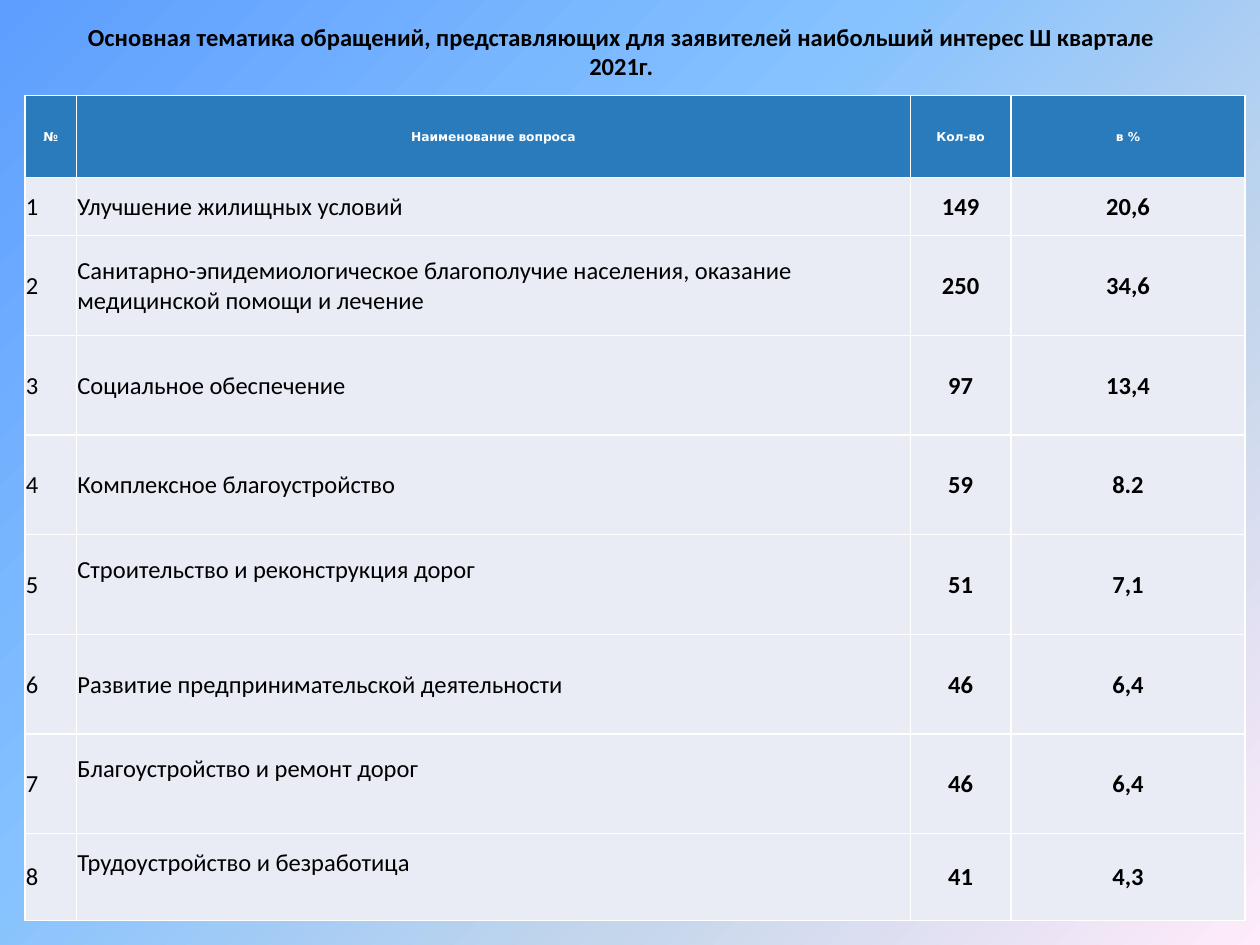
from copy import deepcopy
from dataclasses import dataclass

from lxml.etree import SubElement
from pptx import Presentation
from pptx.dml.color import RGBColor
from pptx.enum.text import MSO_ANCHOR, PP_ALIGN
from pptx.oxml.ns import qn
from pptx.util import Cm, Pt


@dataclass(frozen=True)
class Theme:
    font: str = "Calibri"
    head_font: str = "DejaVu Sans"
    size: int = 14
    head_size: int = 7
    ink: str = "000000"
    light: str = "FFFFFF"
    head: str = "297BBC"
    body: str = "E9EBF5"
    sky: tuple = ((0, "5E9EFF"), (0.4, "85C2FF"), (0.7, "C4D6EB"), (1, "FFEBFA"))


class Page:
    def __init__(self, slide, theme):
        self.slide = slide
        self.theme = theme

    def backdrop(self):
        fill = self.slide.background.fill
        fill.gradient()
        fill.gradient_angle = 315
        stops = next(self.slide.element.iter(qn("a:gsLst")))
        while len(stops) < len(self.theme.sky):
            stops.append(deepcopy(stops[0]))
        for stop, (place, color) in zip(fill.gradient_stops, self.theme.sky):
            stop.color.rgb = RGBColor.from_string(color)
            stop.position = place

    def label(self, frame, text, bold, align, head=False):
        theme = self.theme
        frame.text = text
        for para in frame.paragraphs:
            para.alignment = align
            for run in para.runs:
                font = run.font
                font.name = theme.head_font if head else theme.font
                font.size = Pt(theme.head_size if head else theme.size)
                font.bold = bold
                font.color.rgb = RGBColor.from_string(theme.light if head else theme.ink)

    def title(self, text, left, top, width, height):
        shape = self.slide.shapes.title
        shape.left, shape.top = Cm(left), Cm(top)
        shape.width, shape.height = Cm(width), Cm(height)
        frame = shape.text_frame
        frame.word_wrap = True
        frame.vertical_anchor = MSO_ANCHOR.MIDDLE
        self.label(frame, text, True, PP_ALIGN.CENTER)

    def border(self, cell):
        props = cell._tc.get_or_add_tcPr()
        for side in ("a:lnL", "a:lnR", "a:lnT", "a:lnB"):
            line = SubElement(props, qn(side), w=str(Pt(1)))
            fill = SubElement(line, qn("a:solidFill"))
            SubElement(fill, qn("a:srgbClr"), val=self.theme.light)

    def cell(self, cell, text, head, number, lift):
        cell.vertical_anchor = MSO_ANCHOR.MIDDLE
        cell.margin_left = cell.margin_right = cell.margin_top = Cm(0.02)
        cell.margin_bottom = Cm(lift)
        self.border(cell)
        cell.fill.solid()
        color = self.theme.head if head else self.theme.body
        cell.fill.fore_color.rgb = RGBColor.from_string(color)
        strong = head or number
        align = PP_ALIGN.CENTER if strong else PP_ALIGN.LEFT
        self.label(cell.text_frame, text, strong, align, head)

    def table(self, rows, left, top, widths, heights, raised):
        table = self.slide.shapes.add_table(
            len(rows), len(widths), Cm(left), Cm(top),
            Cm(sum(widths)), Cm(sum(heights))).table
        for col, width in zip(table.columns, widths):
            col.width = Cm(width)
        for row, height in zip(table.rows, heights):
            row.height = Cm(height)
        for r, row in enumerate(rows):
            for c, text in enumerate(row):
                lift = 0.6 if c == 1 and r in raised else 0
                self.cell(table.cell(r, c), text, r == 0, c > 1, lift)


HEAD = ("№", "Наименование вопроса", "Кол-во", "в %")
TOPICS = (
    ("Улучшение жилищных условий", "149", "20,6"),
    ("Санитарно-эпидемиологическое благополучие населения, "
     "оказание медицинской помощи и лечение", "250", "34,6"),
    ("Социальное обеспечение", "97", "13,4"),
    ("Комплексное благоустройство", "59", "8.2"),
    ("Строительство и реконструкция дорог", "51", "7,1"),
    ("Развитие предпринимательской деятельности", "46", "6,4"),
    ("Благоустройство и ремонт дорог", "46", "6,4"),
    ("Трудоустройство и безработица", "41", "4,3"),
)


def main():
    deck = Presentation()
    deck.slide_width, deck.slide_height = Cm(25.4), Cm(19.05)
    page = Page(deck.slides.add_slide(deck.slide_layouts[5]), Theme())
    page.backdrop()
    page.title("Основная тематика обращений, представляющих для заявителей "
               "наибольший интерес Ш квартале 2021г.", 0.89, 0.33, 23.27, 1.4)
    rows = [HEAD] + [(str(n), *topic) for n, topic in enumerate(TOPICS, 1)]
    page.table(rows, 0.5, 1.93, (1.04, 16.81, 2.03, 4.72),
               (1.65, 1.17, *[2.01] * 6, 1.75), raised=(5, 7, 8))
    deck.save("out.pptx")


if __name__ == "__main__":
    main()
